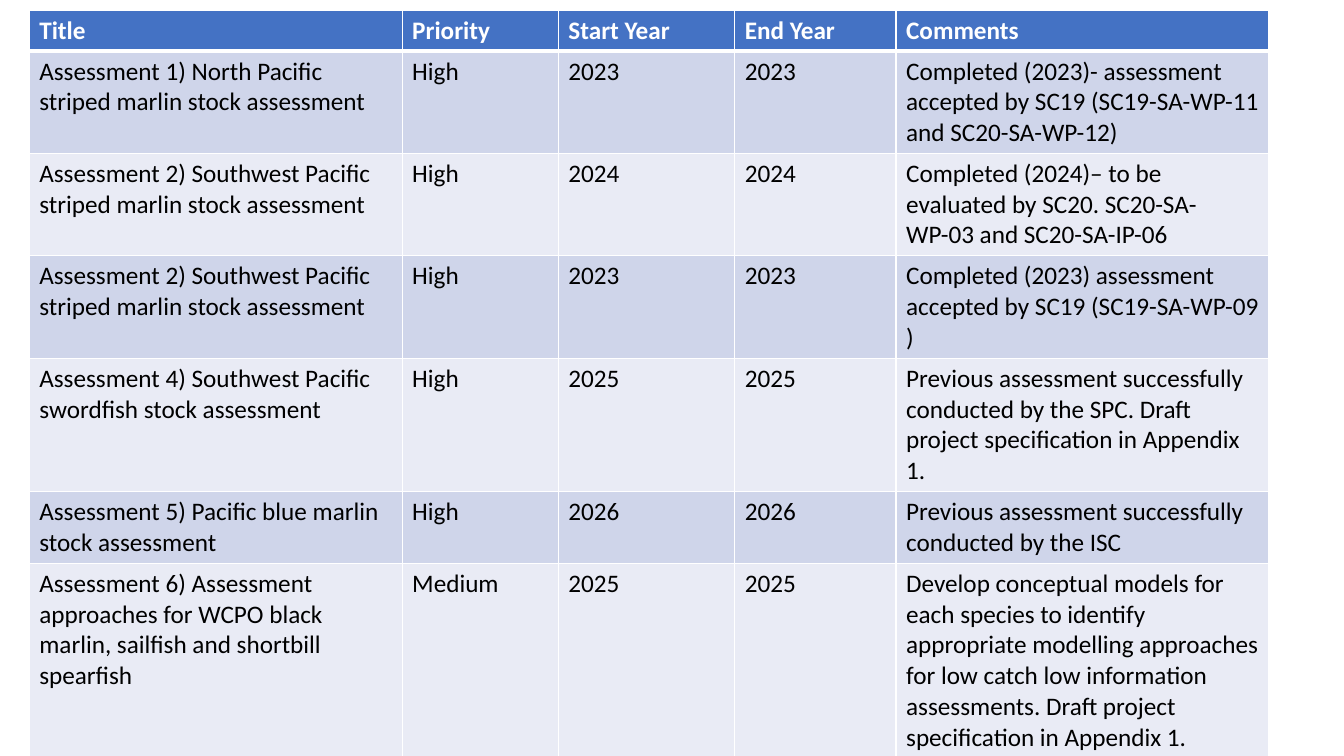
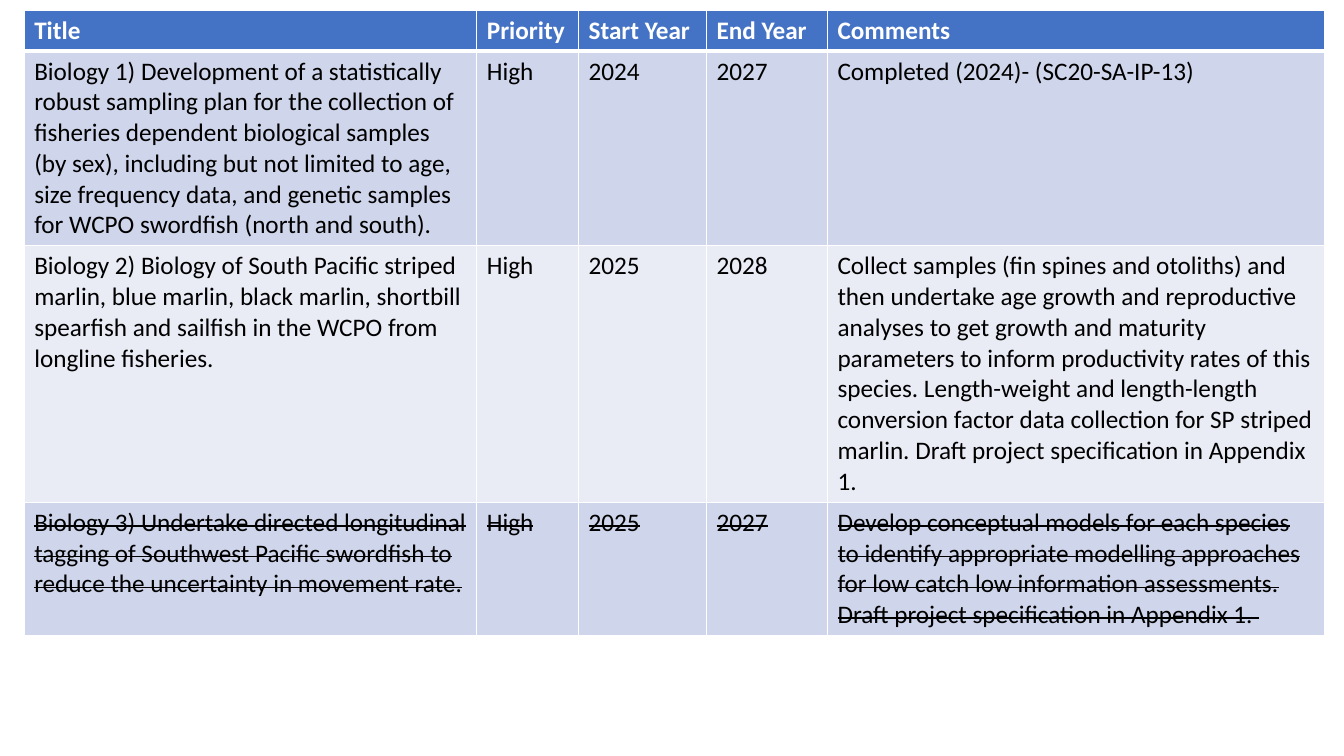
from dataclasses import dataclass

from lxml import etree
from pptx import Presentation
from pptx.dml.color import RGBColor
from pptx.oxml.ns import qn
from pptx.util import Pt


@dataclass(frozen=True)
class Theme:
    font: str = "Calibri"
    size: float = 18
    head: str = "4472C4"
    bands: tuple = ("CFD5EA", "E9EBF5")
    light: str = "FFFFFF"
    dark: str = "000000"
    thin: float = 1
    thick: float = 3
    line: float = 22
    pad: float = 7.2


THEME = Theme()
HEADS = ("Title", "Priority", "Start Year", "End Year", "Comments")

STOCKS = [
    (3, False, ("Assessment 1) North Pacific striped marlin stock assessment", "High", "2023", "2023",
                "Completed (2023)- assessment accepted by SC19 (SC19-SA-WP-11 and SC20-SA-WP-12)")),
    (3, False, ("Assessment 2) Southwest Pacific striped marlin stock assessment", "High", "2024", "2024",
                "Completed (2024)– to be evaluated by SC20. SC20-SA-WP-03 and SC20-SA-IP-06")),
    (3, False, ("Assessment 2) Southwest Pacific striped marlin stock assessment", "High", "2023", "2023",
                "Completed (2023) assessment accepted by SC19 (SC19-SA-WP-09 )")),
    (4, False, ("Assessment 4) Southwest Pacific swordfish stock assessment", "High", "2025", "2025",
                "Previous assessment successfully conducted by the SPC. "
                "Draft project specification in Appendix 1.")),
    (2, False, ("Assessment 5) Pacific blue marlin stock assessment", "High", "2026", "2026",
                "Previous assessment successfully conducted by the ISC")),
    (6, False, ("Assessment 6) Assessment approaches for WCPO black marlin, sailfish and shortbill spearfish",
                "Medium", "2025", "2025",
                "Develop conceptual models for each species to identify appropriate modelling approaches "
                "for low catch low information assessments. Draft project specification in Appendix 1.")),
]

BIOLOGY = [
    (6, False, ("Biology 1) Development of a statistically robust sampling plan for the collection of "
                "fisheries dependent biological samples (by sex), including but not limited to age, "
                "size frequency data, and genetic samples for WCPO swordfish (north and south).",
                "High", "2024", "2027", "Completed (2024)- (SC20-SA-IP-13)")),
    (8, False, ("Biology 2) Biology of South Pacific striped marlin, blue marlin, black marlin, "
                "shortbill spearfish and sailfish in the WCPO from longline fisheries.",
                "High", "2025", "2028",
                "Collect samples (fin spines and otoliths) and then undertake age growth and reproductive "
                "analyses to get growth and maturity parameters to inform productivity rates of this "
                "species. Length-weight and length-length conversion factor data collection for SP "
                "striped marlin. Draft project specification in Appendix 1.")),
    (4, True, ("Biology 3) Undertake directed longitudinal tagging of Southwest Pacific swordfish to "
               "reduce the uncertainty in movement rate.", "High", "2025", "2027",
               "Develop conceptual models for each species to identify appropriate modelling approaches "
               "for low catch low information assessments. Draft project specification in Appendix 1. ")),
]


def add_edges(cell, top, base):
    props = cell._tc.get_or_add_tcPr()
    for side, width in (("L", THEME.thin), ("R", THEME.thin), ("T", top), ("B", base)):
        edge = etree.SubElement(props, qn(f"a:ln{side}"), w=str(Pt(width)))
        fill = etree.SubElement(edge, qn("a:solidFill"))
        etree.SubElement(fill, qn("a:srgbClr"), val=THEME.light)


def fill_cell(cell, text, fill, color, bold, struck):
    cell.fill.solid()
    cell.fill.fore_color.rgb = RGBColor.from_string(fill)
    run = cell.text_frame.paragraphs[0].add_run()
    run.text = text
    font = run.font
    font.name, font.size, font.bold = THEME.font, Pt(THEME.size), bold
    font.color.rgb = RGBColor.from_string(color)
    if struck:
        run._r.get_or_add_rPr().set("strike", "sngStrike")


def add_plan(slide, left, top, widths, items):
    rows = [(1, False, HEADS), *items]
    highs = [THEME.line * lines + THEME.pad for lines, _, _ in rows]
    table = slide.shapes.add_table(len(rows), len(widths), Pt(left), Pt(top),
                                   Pt(sum(widths)), Pt(sum(highs))).table
    for col, width in zip(table.columns, widths):
        col.width = Pt(width)
    for i, (_, struck, texts) in enumerate(rows):
        table.rows[i].height = Pt(highs[i])
        head = i == 0
        fill = THEME.head if head else THEME.bands[(i - 1) % 2]
        color = THEME.light if head else THEME.dark
        for j, text in enumerate(texts):
            cell = table.cell(i, j)
            add_edges(cell, THEME.thick if i == 1 else THEME.thin,
                      THEME.thick if head else THEME.thin)
            fill_cell(cell, text, fill, color, head, struck)


def main():
    deck = Presentation()
    deck.slide_width, deck.slide_height = Pt(960), Pt(540)
    blank = deck.slide_layouts[6]
    plans = (
        (20.9, 7.2, (266.4, 111.6, 126, 115.2, 266.4), STOCKS),
        (17.3, 7.2, (323.3, 72.7, 91.4, 86.4, 355), BIOLOGY),
    )
    for plan in plans:
        add_plan(deck.slides.add_slide(blank), *plan)
    deck.save("out.pptx")


if __name__ == "__main__":
    main()
